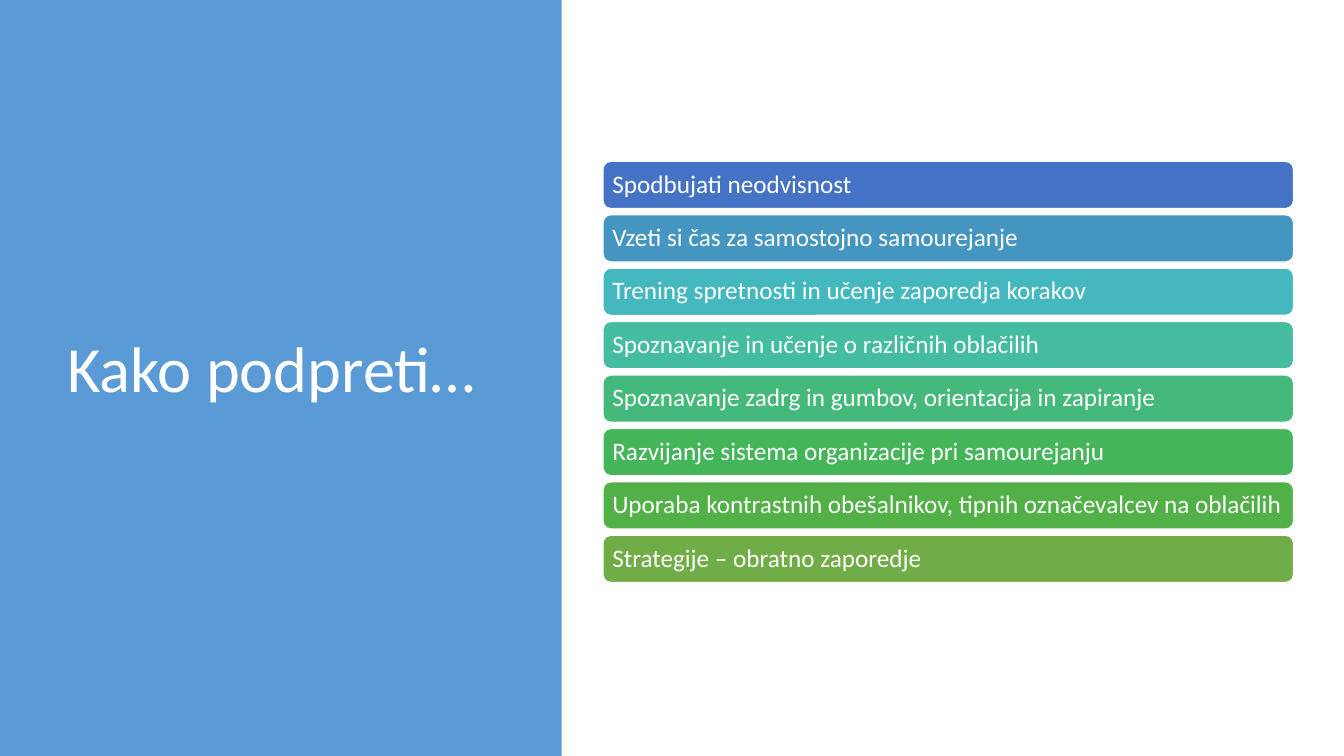
from pptx import Presentation
from pptx.dml.color import RGBColor
from pptx.enum.shapes import MSO_SHAPE
from pptx.enum.text import MSO_ANCHOR, PP_ALIGN
from pptx.util import Inches, Pt

RECT = MSO_SHAPE.RECTANGLE
ROUND = MSO_SHAPE.ROUNDED_RECTANGLE
MIDDLE = MSO_ANCHOR.MIDDLE
LEFT = PP_ALIGN.LEFT

FONT = "Calibri"
COLORS = {
    "white": "FFFFFF",
    "panel": "5B9BD5",
    "blue": "4472C4",
    "steel": "4496C1",
    "cyan": "43B8BF",
    "teal": "43BCA0",
    "jade": "44B97B",
    "green": "45B559",
    "leaf": "52B146",
    "olive": "70AD47",
}

TIPS = [
    ("Spodbujati neodvisnost", "blue"),
    ("Vzeti si čas za samostojno samourejanje", "steel"),
    ("Trening spretnosti in učenje zaporedja korakov", "cyan"),
    ("Spoznavanje in učenje o različnih oblačilih", "teal"),
    ("Spoznavanje zadrg in gumbov, orientacija in zapiranje", "jade"),
    ("Razvijanje sistema organizacije pri samourejanju", "green"),
    ("Uporaba kontrastnih obešalnikov, tipnih označevalcev na oblačilih", "leaf"),
    ("Strategije – obratno zaporedje", "olive"),
]
TOP, PITCH = 1.6, 0.53


def color(name):
    return RGBColor.from_string(COLORS[name])


def put_text(shape, text, size=18, ink="white", side=0.1, edge=0.05):
    frame = shape.text_frame
    frame.word_wrap = True
    frame.vertical_anchor = MIDDLE
    frame.margin_left = frame.margin_right = Inches(side)
    frame.margin_top = frame.margin_bottom = Inches(edge)
    para = frame.paragraphs[0]
    para.alignment = LEFT
    para.line_spacing = 0.9
    run = para.add_run()
    run.text = text
    run.font.name = FONT
    run.font.size = Pt(size)
    run.font.color.rgb = color(ink)


def add_box(slide, kind, box, fill, line=None):
    shape = slide.shapes.add_shape(kind, *map(Inches, box))
    shape.shadow.inherit = False
    shape.fill.solid()
    shape.fill.fore_color.rgb = color(fill)
    if line:
        shape.line.color.rgb = color(line)
        shape.line.width = Pt(1)
    else:
        shape.line.fill.background()
    return shape


def add_title(slide, text, box):
    shape = slide.shapes.add_textbox(*map(Inches, box))
    put_text(shape, text, size=46)


def add_tip(slide, row, text, fill):
    box = (5.98, TOP + row * PITCH, 6.85, 0.47)
    bar = add_box(slide, ROUND, box, fill, line="white")
    put_text(bar, text, side=0.07, edge=0.07)


def main():
    deck = Presentation()
    deck.slide_width = Inches(13.33)
    deck.slide_height = Inches(7.5)
    slide = deck.slides.add_slide(deck.slide_layouts[6])

    # Left panel with the title
    add_box(slide, RECT, (0, 0, 5.57, 7.5), "panel")
    add_title(slide, "Kako podpreti…", (0.57, 0.68, 4.62, 6.02))

    # Stack of tips
    for row, (text, fill) in enumerate(TIPS):
        add_tip(slide, row, text, fill)

    deck.save("out.pptx")


if __name__ == "__main__":
    main()
